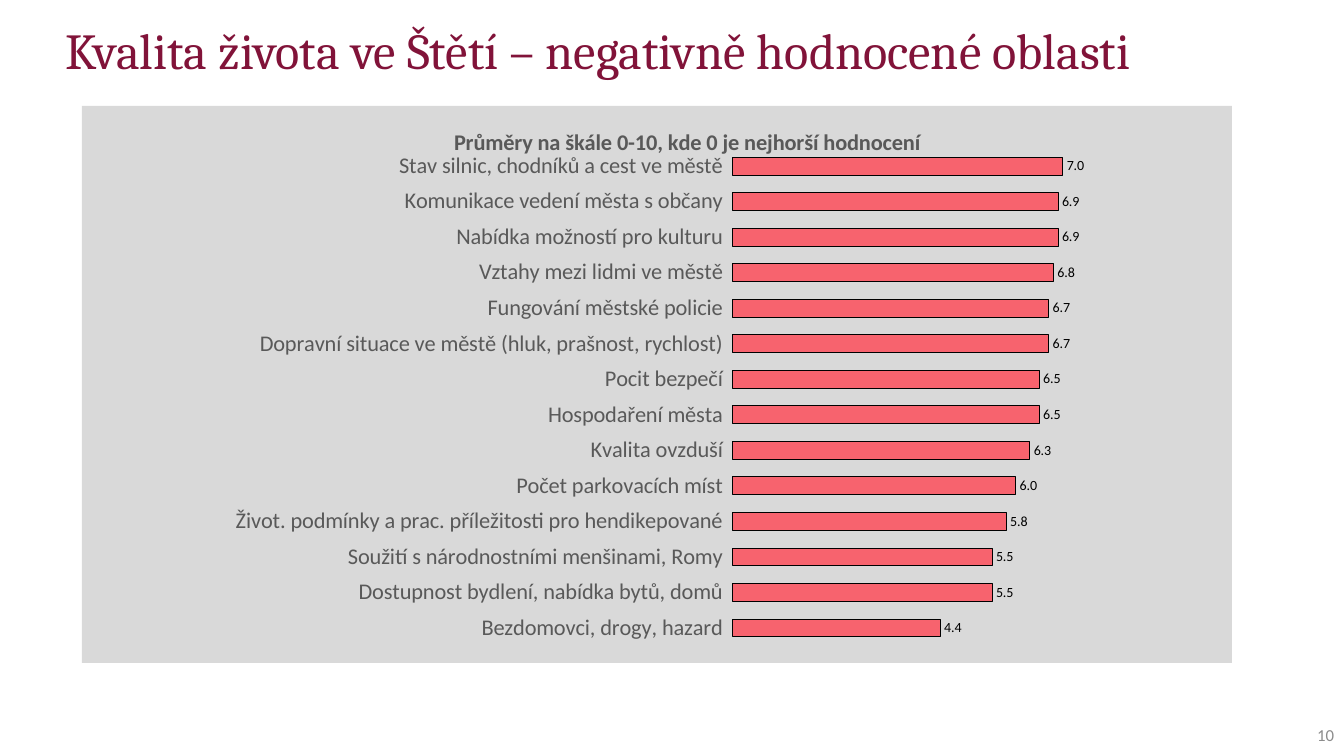
from dataclasses import dataclass

from pptx import Presentation
from pptx import util as u
from pptx.chart.data import CategoryChartData
from pptx.dml.color import RGBColor
from pptx.enum import chart as ch, text
from pptx.oxml import parse_xml
from pptx.oxml.ns import nsdecls, qn


@dataclass(frozen=True)
class Theme:
    heading_font: str = "Cambria"
    body_font: str = "Calibri"
    heading: str = "811339"
    label: str = "595959"
    number: str = "8C8C8C"
    ink: str = "000000"
    panel: str = "D9D9D9"
    bar: str = "F7636E"
    title_size: int = 36
    label_size: int = 16
    number_size: int = 12
    value_size: int = 10


AREAS = [
    ("Stav silnic, chodníků a cest ve městě", 7.0),
    ("Komunikace vedení města s občany", 6.9),
    ("Nabídka možností pro kulturu", 6.9),
    ("Vztahy mezi lidmi ve městě", 6.8),
    ("Fungování městské policie", 6.7),
    ("Dopravní situace ve městě (hluk, prašnost, rychlost)", 6.7),
    ("Pocit bezpečí", 6.5),
    ("Hospodaření města", 6.5),
    ("Kvalita ovzduší", 6.3),
    ("Počet parkovacích míst", 6.0),
    ("Život. podmínky a prac. příležitosti pro hendikepované", 5.8),
    ("Soužití s národnostními menšinami, Romy", 5.5),
    ("Dostupnost bydlení, nabídka bytů, domů", 5.5),
    ("Bezdomovci, drogy, hazard", 4.4),
]


def px(n):
    return u.Emu(round(n * 914400 / 100.8))


def set_layout(parent, index, inner=False, **fractions):
    """Place a chart part by fractions of the chart's size."""
    for old in parent.findall(qn("c:layout")):
        parent.remove(old)
    target = '<c:layoutTarget val="inner"/>' if inner else ""
    modes = "".join(f'<c:{k}Mode val="edge"/>' for k in "xy")
    sizes = "".join(f'<c:{k} val="{v}"/>' for k, v in fractions.items())
    parent.insert(index, parse_xml(
        f'<c:layout {nsdecls("c")}><c:manualLayout>{target}{modes}{sizes}'
        "</c:manualLayout></c:layout>"))


class Deck:
    def __init__(self, theme):
        self.t = theme
        self.prs = Presentation()
        self.prs.slide_width, self.prs.slide_height = px(1344), px(756)
        self.slide = self.prs.slides.add_slide(self.prs.slide_layouts[5])

    def style(self, font, size, color, name=None, bold=False):
        font.name = name or self.t.body_font
        font.size = u.Pt(size)
        font.bold = bold
        font.color.rgb = RGBColor.from_string(color)

    def title(self, words, x, y, w, h):
        sp = self.slide.shapes.title
        sp.left, sp.top, sp.width, sp.height = map(px, (x, y, w, h))
        tf = sp.text_frame
        tf.margin_left = tf.margin_top = tf.margin_right = tf.margin_bottom = 0
        tf.vertical_anchor = text.MSO_ANCHOR.TOP
        tf.auto_size = text.MSO_AUTO_SIZE.NONE
        p = tf.paragraphs[0]
        p.alignment = text.PP_ALIGN.LEFT
        p.line_spacing = 0.9
        r = p.add_run()
        r.text = words
        self.style(r.font, self.t.title_size, self.t.heading, self.t.heading_font)

    def page_number(self, number, x, y, w, h):
        tf = self.slide.shapes.add_textbox(*map(px, (x, y, w, h))).text_frame
        tf.word_wrap = True
        tf.vertical_anchor = text.MSO_ANCHOR.MIDDLE
        p = tf.paragraphs[0]
        p.alignment = text.PP_ALIGN.RIGHT
        r = p.add_run()
        r.text = number
        self.style(r.font, self.t.number_size, self.t.number)

    def bar_chart(self, heading, rows, x, y, w, h):
        t = self.t
        data = CategoryChartData(number_format="0.0")
        data.categories = [name for name, _ in rows]
        data.add_series("Series 1", [value for _, value in rows])
        chart = self.slide.shapes.add_chart(
            ch.XL_CHART_TYPE.BAR_CLUSTERED, *map(px, (x, y, w, h)), data).chart
        self.style(chart.font, t.value_size, t.ink)
        chart.has_legend = False

        # Grey panel behind the bars
        space = chart.element
        space.find(qn("c:chart")).addnext(parse_xml(
            f'<c:spPr {nsdecls("c", "a")}><a:solidFill><a:srgbClr val="{t.panel}"/>'
            "</a:solidFill><a:ln><a:noFill/></a:ln></c:spPr>"))

        # Heading and plot placement
        chart.has_title = True
        r = chart.chart_title.text_frame.paragraphs[0].add_run()
        r.text = heading
        self.style(r.font, t.label_size, t.label, bold=True)
        set_layout(chart.chart_title.element, 1, x=0.32, y=0.03)
        set_layout(next(space.iter(qn("c:plotArea"))), 0, inner=True,
                   x=0.566, y=0.076, w=0.41, h=0.893)

        # Axes
        cat = chart.category_axis
        cat.reverse_order = True
        cat.has_major_gridlines = False
        cat.major_tick_mark = ch.XL_TICK_MARK.OUTSIDE
        cat.format.line.color.rgb = RGBColor.from_string(t.panel)
        cat.format.line.width = u.Pt(0.75)
        self.style(cat.tick_labels.font, t.label_size, t.label)
        val = chart.value_axis
        val.minimum_scale, val.maximum_scale, val.major_unit = 0, 10, 1
        val.has_major_gridlines = False
        val.visible = False

        # Bars and their values
        plot = chart.plots[0]
        plot.gap_width = 100
        plot.vary_by_categories = False
        bars = plot.series[0]
        bars.format.fill.solid()
        bars.format.fill.fore_color.rgb = RGBColor.from_string(t.bar)
        bars.format.line.color.rgb = RGBColor.from_string(t.ink)
        bars.format.line.width = u.Pt(0.5)
        labels = bars.data_labels
        labels.show_value = True
        labels.number_format = "#,##0.0"
        labels.number_format_is_linked = False
        labels.position = ch.XL_LABEL_POSITION.OUTSIDE_END
        self.style(labels.font, t.value_size, t.ink)


def main():
    deck = Deck(Theme())
    deck.title("Kvalita života ve Štětí – negativně hodnocené oblasti", 65, 26, 1202, 108)
    deck.page_number("10", 1285, 715, 59, 40)
    deck.bar_chart("Průměry na škále 0-10, kde 0 je nejhorší hodnocení", AREAS,
                   82, 106, 1150, 557)
    deck.prs.save("out.pptx")


if __name__ == "__main__":
    main()
